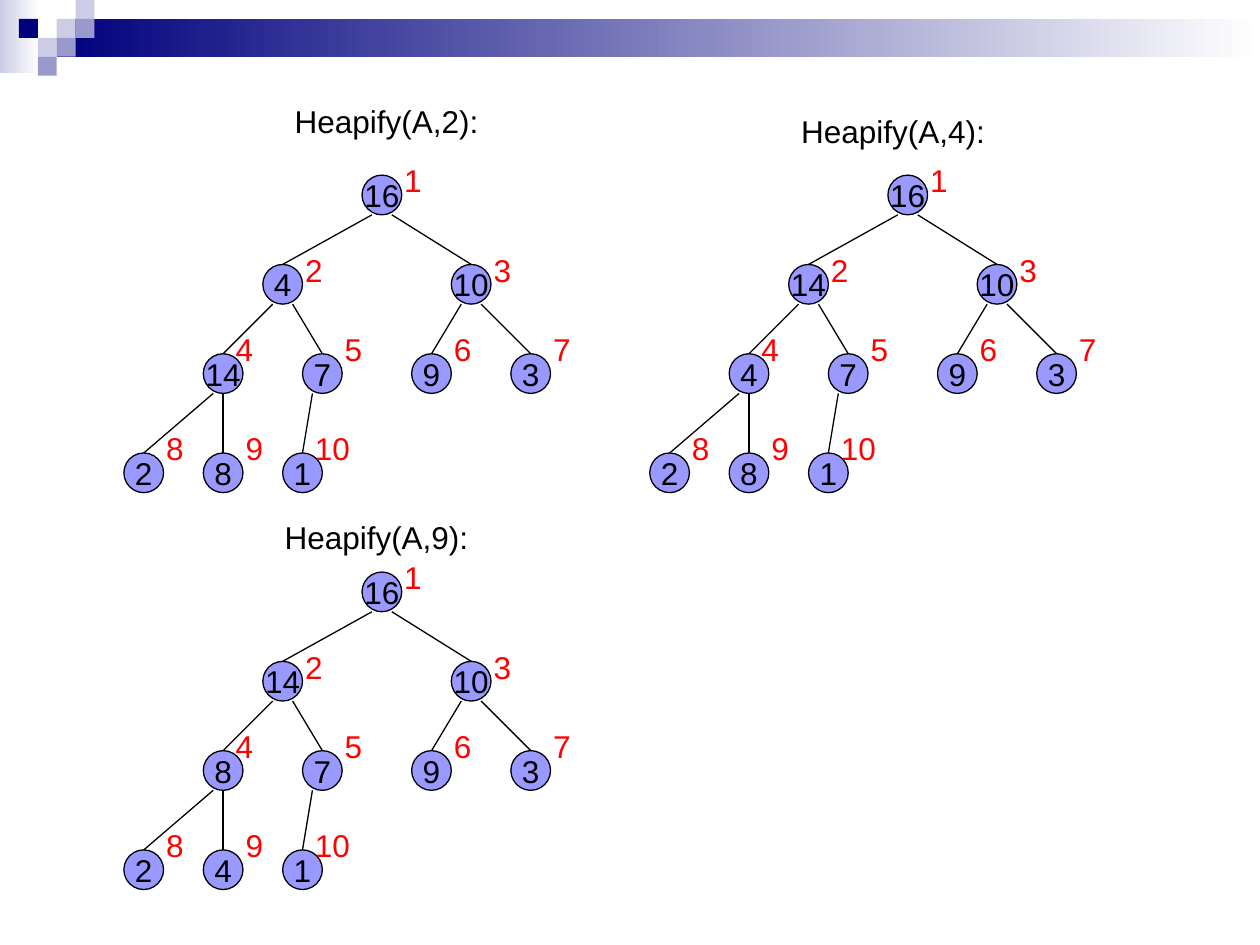
from lxml import etree
from pptx import Presentation
from pptx.dml.color import RGBColor
from pptx.enum import shapes, text
from pptx.oxml import ns
from pptx.util import Pt

COLORS = {"navy": "00007D", "lavender": "CCCCE6", "violet": "9999CC",
          "node": "9999FF", "index": "FF0101", "black": "000000", "white": "FFFFFF"}

STEP = 5.67           # tree grid, 2 mm
DIAMETER = 4 * STEP
TILE = 10.8           # corner mosaic

# Grid place of each node relative to the root, by heap index
NODE_GRID = {1: (0, 0), 2: (-10, 9), 3: (9, 9),
             4: (-16, 18), 5: (-6, 18), 6: (5, 18), 7: (15, 18),
             8: (-24, 28), 9: (-16, 28), 10: (-8, 28)}

# Caption, caption position, root position, heap contents
TREES = [
    ("Heapify(A,2):", (161.3, 54.7), (206.9, 100.1), [16, 4, 10, 14, 7, 9, 3, 2, 8, 1]),
    ("Heapify(A,4):", (450.7, 60.5), (507.4, 100.1), [16, 14, 10, 4, 7, 9, 3, 2, 8, 1]),
    ("Heapify(A,9):", (155.5, 292.3), (206.9, 326.9), [16, 14, 10, 8, 7, 9, 3, 2, 4, 1]),
]


def rgb(color):
    return RGBColor.from_string(COLORS[color])


class HeapSlide:
    font = "Arial"
    size = Pt(18)
    line_width = Pt(0.75)

    def __init__(self, slide):
        self.slide = slide

    def add_words(self, frame, words, color):
        run = frame.paragraphs[0].add_run()
        run.text = words
        run.font.name, run.font.size = self.font, self.size
        run.font.color.rgb = rgb(color)

    def block(self, x, y, width, height, start, end=None):
        """Borderless rectangle, fading to the end colour if one is given."""
        block = self.slide.shapes.add_shape(
            shapes.MSO_SHAPE.RECTANGLE, Pt(x), Pt(y), Pt(width), Pt(height))
        block.shadow.inherit = False
        block.line.fill.background()
        if end:
            block.fill.gradient()
            block.fill.gradient_angle = 0
            for stop, color in zip(block.fill.gradient_stops, (start, end)):
                stop.color.rgb = rgb(color)
        else:
            block.fill.solid()
            block.fill.fore_color.rgb = rgb(start)

    def label(self, words, x, y, width, color):
        label = self.slide.shapes.add_textbox(Pt(x), Pt(y), Pt(width), Pt(28.8))
        label.text_frame.word_wrap = True
        label.text_frame.auto_size = text.MSO_AUTO_SIZE.SHAPE_TO_FIT_TEXT
        self.add_words(label.text_frame, words, color)

    def node(self, value, x, y):
        node = self.slide.shapes.add_shape(
            shapes.MSO_SHAPE.OVAL, Pt(x), Pt(y), Pt(DIAMETER), Pt(DIAMETER))
        node.shadow.inherit = False
        node.fill.solid()
        node.fill.fore_color.rgb = rgb("node")
        node.line.color.rgb = rgb("black")
        node.line.width = self.line_width
        frame = node.text_frame
        frame.word_wrap = False
        frame.vertical_anchor = text.MSO_ANCHOR.MIDDLE
        frame.margin_left = frame.margin_right = frame.margin_top = frame.margin_bottom = 0
        frame.paragraphs[0].alignment = text.PP_ALIGN.CENTER
        self.add_words(frame, str(value), "black")
        return node

    def edge(self, parent, child, shift):
        """Line from the parent's underside, shifted sideways, to the child's top."""
        x = parent.left + parent.width // 2 + Pt(shift)
        edge = self.slide.shapes.add_connector(
            shapes.MSO_CONNECTOR.STRAIGHT, x, parent.top + parent.height,
            child.left + child.width // 2, child.top)
        edge.end_connect(child, 0)
        edge.line.color.rgb = rgb("black")
        edge.line.width = self.line_width
        etree.SubElement(edge._element.spPr, ns.qn("a:effectLst"))

    def tree(self, root_x, root_y, heap):
        places = {index: (root_x + column * STEP, root_y + row * STEP)
                  for index, (column, row) in NODE_GRID.items()}
        nodes = {index: self.node(heap[index - 1], *place)
                 for index, place in places.items()}
        for index in range(2, len(heap) + 1):
            side = 0 if index == 9 else 1 if index % 2 else -1
            self.edge(nodes[index // 2], nodes[index], side * STEP)
        for index, (x, y) in places.items():
            right = 2 if index in (4, 10) else 3
            up = 2 if index < 4 else 3
            self.label(str(index), x + right * STEP, y - up * STEP,
                       51.1 if index == 10 else 23, "index")


def main():
    deck = Presentation()
    deck.slide_width, deck.slide_height = Pt(720), Pt(540)
    page = HeapSlide(deck.slides.add_slide(deck.slide_layouts[6]))

    # Header band and corner mosaic
    page.block(0, 0, 22.3, 41.8, "lavender", "white")
    page.block(32.4, TILE, 687.6, 21.6, "navy", "white")
    for column, row, color in [(3, 1, "lavender"), (4, 0, "lavender"), (4, 1, "violet"),
                               (2, 2, "lavender"), (1, 1, "navy"), (3, 2, "violet"),
                               (2, 3, "violet")]:
        page.block(column * TILE, row * TILE, TILE, TILE, color)

    # Heap after each call
    for caption, caption_at, root_at, heap in TREES:
        page.tree(*root_at, heap)
        page.label(caption, *caption_at, 130.3, "black")

    deck.save("out.pptx")


if __name__ == "__main__":
    main()
